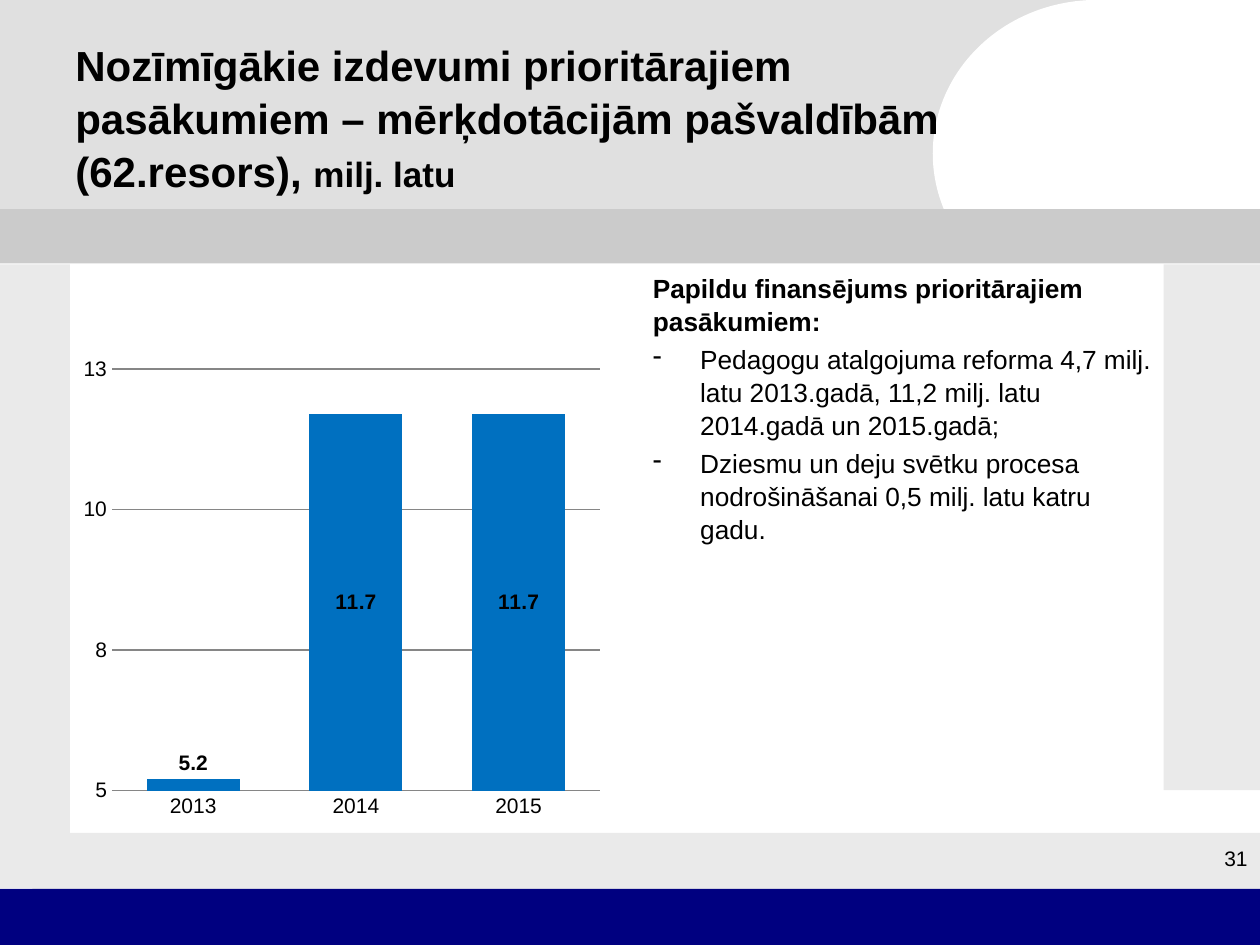
from lxml import etree
from pptx import Presentation
from pptx import util as u
from pptx.chart import data
from pptx.dml import color
from pptx.enum import chart as charts, shapes, text
from pptx.oxml import ns, parse_xml

COLORS = {
    "black": "000000", "white": "FFFFFF", "header": "E0E0E0", "strip": "CBCBCB",
    "margin": "EAEAEA", "footer": "000080", "bar": "0070C0", "grid": "868686",
}


class SlideBuilder:
    """Draws styled elements on the current slide, with lengths in points."""

    font_name = "Arial"
    line_spacing = 1.05

    def __init__(self, slide):
        self.slide = slide

    def rgb(self, name):
        return color.RGBColor.from_string(COLORS[name])

    def style_font(self, font, size, bold=False):
        font.name = self.font_name
        font.size = u.Pt(size)
        font.bold = bold
        font.color.rgb = self.rgb("black")

    def panel(self, box, fill, kind=shapes.MSO_SHAPE.RECTANGLE):
        shape = self.slide.shapes.add_shape(kind, *map(u.Pt, box))
        shape.shadow.inherit = False
        shape.fill.solid()
        shape.fill.fore_color.rgb = self.rgb(fill)
        shape.line.fill.background()

    def text_box(self, box, anchor=text.MSO_ANCHOR.TOP):
        text_frame = self.slide.shapes.add_textbox(*map(u.Pt, box)).text_frame
        text_frame.word_wrap = True
        text_frame.vertical_anchor = anchor
        return text_frame

    def title(self, box, main, unit):
        text_frame = self.text_box(box, text.MSO_ANCHOR.MIDDLE)
        text_frame.text = main
        paragraph = text_frame.paragraphs[0]
        paragraph.line_spacing = self.line_spacing
        paragraph.add_run().text = unit
        for run in paragraph.runs:
            self.style_font(run.font, 24, True)
        paragraph.runs[-1].font.size = u.Pt(20)

    def dash_list(self, box, heading, items):
        text_frame = self.text_box(box)
        text_frame.text = "\n".join([heading, *items])
        for index, paragraph in enumerate(text_frame.paragraphs):
            paragraph.line_spacing = self.line_spacing
            if index:
                paragraph.space_before = u.Pt(3)
                properties = paragraph._p.get_or_add_pPr()
                properties.set("marL", str(u.Pt(27)))
                properties.set("indent", str(-u.Pt(27)))
                etree.SubElement(properties, ns.qn("a:buChar"), char="-")
            for run in paragraph.runs:
                self.style_font(run.font, 15, index == 0)

    def page_number(self, box, number):
        text_frame = self.text_box(box)
        text_frame.text = number
        paragraph = text_frame.paragraphs[0]
        paragraph.alignment = text.PP_ALIGN.RIGHT
        self.style_font(paragraph.runs[0].font, 12)

    def column_chart(self, box, categories, values):
        chart_data = data.CategoryChartData()
        chart_data.categories = categories
        chart_data.add_series("Series 1", values)
        chart = self.slide.shapes.add_chart(
            charts.XL_CHART_TYPE.COLUMN_CLUSTERED, *map(u.Pt, box), chart_data
        ).chart
        chart.has_legend = chart.has_title = False
        self.style_font(chart.font, 12)
        self.chart_axes(chart)
        self.chart_columns(chart.plots[0])
        self.chart_layout(chart, x=0.07, y=0.07, w=0.91, h=0.85)

    def chart_axes(self, chart):
        for axis in (chart.category_axis, chart.value_axis):
            axis.major_tick_mark = charts.XL_TICK_MARK.NONE
            self.style_font(axis.tick_labels.font, 12)
        axis.minimum_scale, axis.maximum_scale, axis.major_unit = 5, 12.5, 2.5
        axis.tick_labels.number_format = "0"
        axis.tick_labels.number_format_is_linked = False
        axis.format.line.fill.background()
        for line in (axis.major_gridlines.format.line, chart.category_axis.format.line):
            line.color.rgb = self.rgb("grid")
            line.width = u.Pt(0.75)

    def chart_columns(self, plot):
        plot.gap_width, plot.overlap = 75, -25
        plot.vary_by_categories = False
        series = plot.series[0]
        series.format.fill.solid()
        series.format.fill.fore_color.rgb = self.rgb("bar")
        labels = series.data_labels
        labels.show_value = True
        labels.number_format = "0.0"
        labels.number_format_is_linked = False
        labels.position = charts.XL_LABEL_POSITION.CENTER
        self.style_font(labels.font, 12, True)
        low_label = series.points[0].data_label
        self.style_font(low_label.font, 12, True)
        low_label.position = charts.XL_LABEL_POSITION.OUTSIDE_END

    def chart_layout(self, chart, **fractions):
        plot_area = chart._chartSpace.chart.plotArea
        for old_layout in plot_area.findall(ns.qn("c:layout")):
            plot_area.remove(old_layout)
        settings = {"layoutTarget": "inner", "xMode": "edge", "yMode": "edge", **fractions}
        values = "".join(f'<c:{key} val="{value}"/>' for key, value in settings.items())
        plot_area.insert(0, parse_xml(
            f'<c:layout {ns.nsdecls("c")}><c:manualLayout>{values}</c:manualLayout></c:layout>'
        ))


def main():
    presentation = Presentation()
    presentation.slide_width, presentation.slide_height = u.Pt(720), u.Pt(540)
    builder = SlideBuilder(presentation.slides.add_slide(presentation.slide_layouts[6]))

    builder.panel((0, 0, 654.5, 121.5), "header")
    builder.panel((533, 0, 187, 175.5), "white", shapes.MSO_SHAPE.OVAL)
    for box, fill in (
        ((0, 151, 40, 356.5), "margin"),
        ((18.5, 476, 701.5, 32), "margin"),
        ((0, 508, 720, 32), "footer"),
        ((665, 151, 55, 300.5), "margin"),
        ((620.5, 0, 99.5, 145.5), "white"),
        ((0, 119.5, 720, 31), "strip"),
    ):
        builder.panel(box, fill)

    builder.title(
        (36, 21.5, 648, 90),
        "Nozīmīgākie izdevumi prioritārajiem\vpasākumiem – mērķdotācijām pašvaldībām\v(62.resors), ",
        "milj. latu",
    )
    builder.column_chart(
        (42.5, 191, 306.5, 283.5), ("2013", "2014", "2015"), (5.2, 11.7, 11.7)
    )
    builder.page_number((557.5, 479.5, 162.5, 36), "31")
    builder.dash_list(
        (366, 151, 300, 329),
        "Papildu finansējums prioritārajiem pasākumiem:",
        (
            "Pedagogu atalgojuma reforma 4,7 milj. latu 2013.gadā, "
            "11,2 milj. latu 2014.gadā un 2015.gadā;",
            "Dziesmu un deju svētku procesa nodrošināšanai 0,5 milj. latu katru gadu.",
        ),
    )
    presentation.save("out.pptx")


if __name__ == "__main__":
    main()
